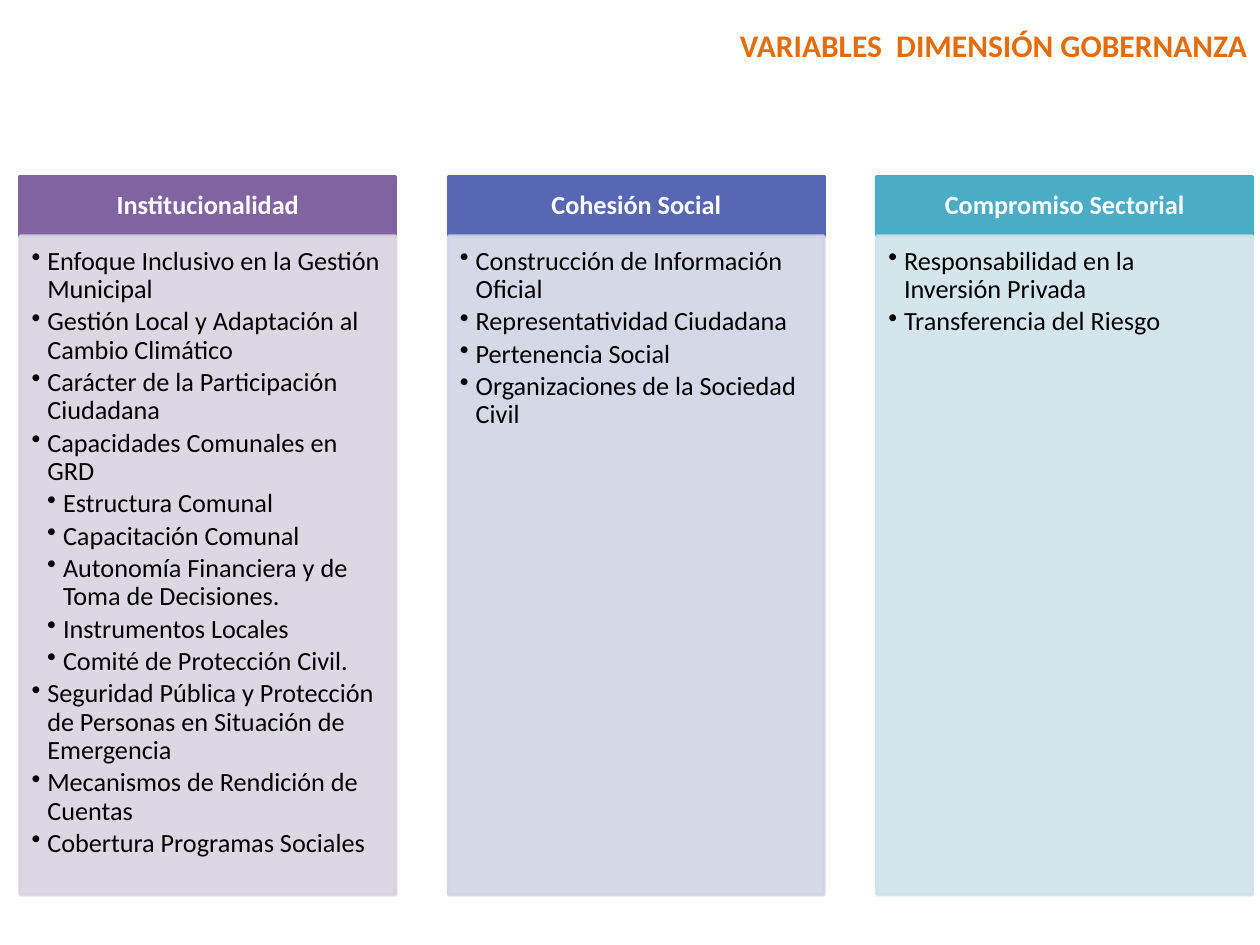
from dataclasses import dataclass

import lxml.etree
import pptx
import pptx.dml.color
import pptx.enum.shapes
import pptx.enum.text
import pptx.oxml.ns
import pptx.util

Inches = pptx.util.Inches
Pt = pptx.util.Pt
Align = pptx.enum.text.PP_ALIGN
Anchor = pptx.enum.text.MSO_ANCHOR
qn = pptx.oxml.ns.qn


@dataclass(frozen=True)
class Theme:
    font: str = "Calibri"
    title_size: float = 18
    text_size: float = 15
    border: float = 2
    title: str = "E46C0A"
    light: str = "FFFFFF"
    dark: str = "000000"


THEME = Theme()

# Heading, heading colour, body colour, (level, text) items
COLUMNS = [
    ("Institucionalidad", "8064A2", "D8D3E0", [
        (1, "Enfoque Inclusivo en la Gestión Municipal"),
        (1, "Gestión Local y Adaptación al Cambio Climático"),
        (1, "Carácter de la Participación Ciudadana"),
        (1, "Capacidades Comunales en GRD"),
        (2, "Estructura Comunal"),
        (2, "Capacitación Comunal"),
        (2, "Autonomía Financiera y de Toma de Decisiones."),
        (2, "Instrumentos Locales"),
        (2, "Comité de Protección Civil."),
        (1, "Seguridad Pública y Protección de Personas en Situación de Emergencia"),
        (1, "Mecanismos de Rendición de Cuentas"),
        (1, "Cobertura Programas Sociales"),
    ]),
    ("Cohesión Social", "5767B4", "D1D4E5", [
        (1, "Construcción de Información Oficial"),
        (1, "Representatividad Ciudadana"),
        (1, "Pertenencia Social"),
        (1, "Organizaciones de la Sociedad Civil"),
    ]),
    ("Compromiso Sectorial", "4BACC6", "D0E3EA", [
        (1, "Responsabilidad en la Inversión Privada"),
        (1, "Transferencia del Riesgo"),
    ]),
]


def rgb(value):
    return pptx.dml.color.RGBColor.from_string(value)


def add_bullet(para, level):
    para.level = level
    properties = para._p.get_or_add_pPr()
    properties.set("marL", str(Inches(0.125 * level)))
    properties.set("indent", str(-Inches(0.125)))
    lxml.etree.SubElement(properties, qn("a:buChar")).set("char", "•")


def write(para, text, *, size=THEME.text_size, color=THEME.dark, bold=False,
          align=Align.LEFT, level=0, line_spacing=0.9, after=0):
    if level:
        add_bullet(para, level)
    para.alignment = align
    para.line_spacing = line_spacing
    para.space_before = Pt(0)
    para.space_after = Pt(after)
    span = para.add_run()
    span.text = text
    span.font.name = THEME.font
    span.font.size = Pt(size)
    span.font.bold = bold
    span.font.color.rgb = rgb(color)


def set_frame(frame, anchor, margins):
    frame.word_wrap = True
    frame.auto_size = pptx.enum.text.MSO_AUTO_SIZE.NONE
    frame.vertical_anchor = anchor
    (frame.margin_left, frame.margin_top,
     frame.margin_right, frame.margin_bottom) = map(Inches, margins)


def set_opacity(fill_parent, percent):
    color = fill_parent.find(qn("a:solidFill"))[0]
    lxml.etree.SubElement(color, qn("a:alpha")).set("val", str(percent * 1000))


def add_panel(page, box, color, opacity=100):
    panel = page.shapes.add_shape(
        pptx.enum.shapes.MSO_SHAPE.RECTANGLE, *map(Inches, box))
    panel.shadow.inherit = False
    panel.fill.solid()
    panel.fill.fore_color.rgb = rgb(color)
    panel.line.color.rgb = rgb(color)
    panel.line.width = Pt(THEME.border)
    if opacity < 100:
        set_opacity(panel._element.spPr, opacity)
        set_opacity(panel.line._ln, opacity)
    return panel


def add_title(page, box, text):
    title = page.shapes.title
    title.left, title.top, title.width, title.height = map(Inches, box)
    set_frame(title.text_frame, Anchor.TOP, (0.1, 0.05, 0.1, 0.05))
    write(title.text_frame.paragraphs[0], text, size=THEME.title_size,
          color=THEME.title, bold=True, align=Align.RIGHT, line_spacing=1.0)


def add_column(page, box, heading, heading_color, body_color, items):
    left, top, width, height = box
    heading_height = 0.475

    header = add_panel(page, (left, top, width, heading_height), heading_color)
    set_frame(header.text_frame, Anchor.MIDDLE, (0.12, 0.07, 0.12, 0.07))
    write(header.text_frame.paragraphs[0], heading, color=THEME.light,
          bold=True, align=Align.CENTER)

    body_box = (left, top + heading_height, width, height - heading_height)
    frame = add_panel(page, body_box, body_color, opacity=90).text_frame
    set_frame(frame, Anchor.TOP, (0.09, 0.09, 0.12, 0.13))
    for index, (level, text) in enumerate(items):
        para = frame.add_paragraph() if index else frame.paragraphs[0]
        write(para, text, level=level, after=0.15 * THEME.text_size)


def add_columns(page, box, columns, gap):
    left, top, width, height = box
    column_width = (width - gap * (len(columns) - 1)) / len(columns)
    for index, column in enumerate(columns):
        column_left = left + index * (column_width + gap)
        add_column(page, (column_left, top, column_width, height), *column)


def main():
    deck = pptx.Presentation()
    deck.slide_width = Inches(10)
    deck.slide_height = Inches(7.5)
    page = deck.slides.add_slide(deck.slide_layouts.get_by_name("Title Only"))
    add_title(page, (1.58, 0.16, 8.42, 0.4), "VARIABLES  DIMENSIÓN GOBERNANZA")
    add_columns(page, (0.16, 1.4, 9.78, 5.7), COLUMNS, gap=0.42)
    deck.save("out.pptx")


if __name__ == "__main__":
    main()
